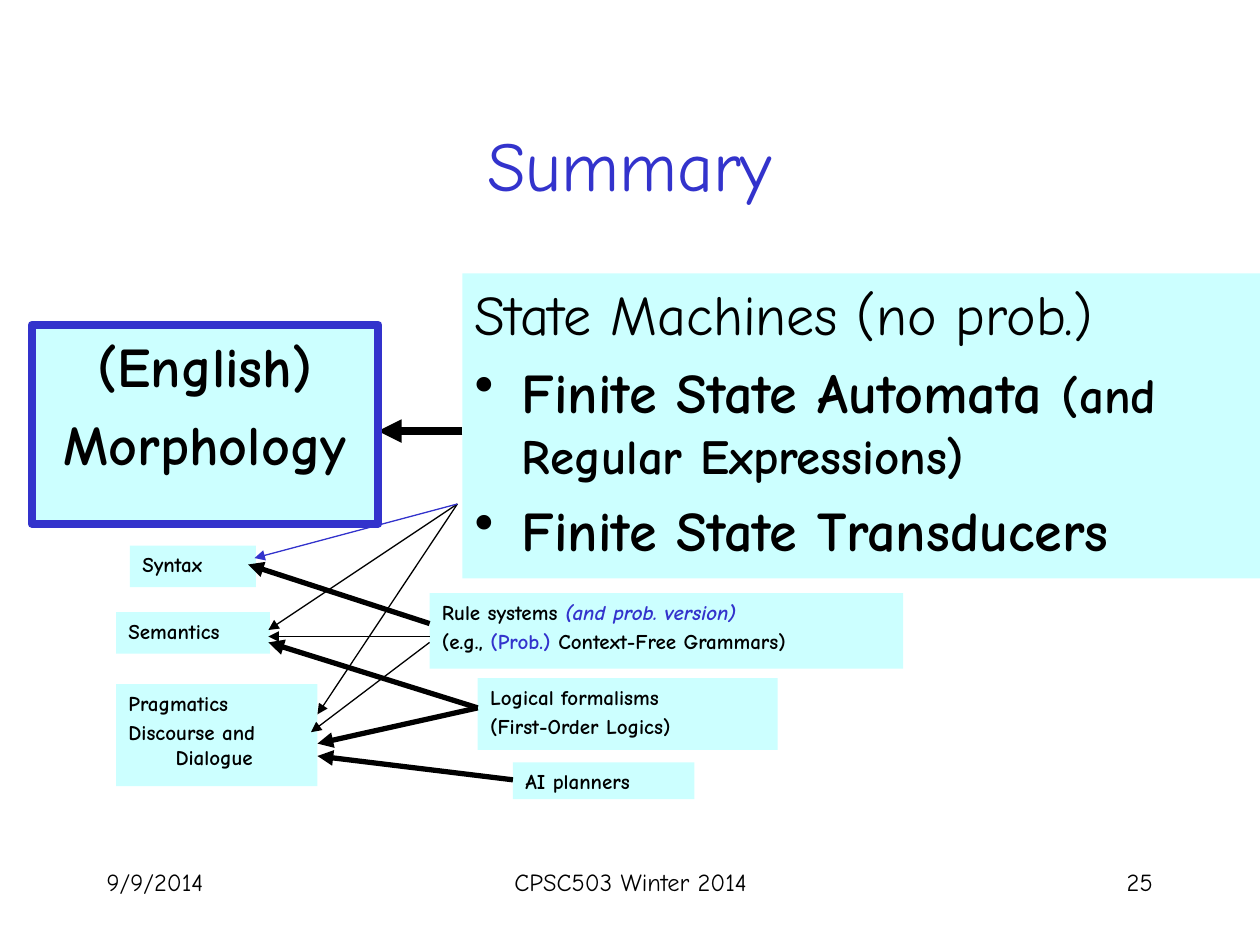
from dataclasses import dataclass
from typing import Optional

from lxml.etree import SubElement
from pptx import Presentation
from pptx.dml.color import RGBColor
from pptx.enum.shapes import MSO_CONNECTOR, MSO_SHAPE
from pptx.enum.text import MSO_ANCHOR, PP_ALIGN
from pptx.oxml.ns import qn
from pptx.util import Cm, Pt

FONT = "Comic Neue"
BLACK, BLUE, CYAN = "000000", "3333CC", "CCFFFF"
HANGING = 0.95


@dataclass
class Span:
    text: str
    size: float = 12
    bold: bool = True
    italic: bool = False
    color: str = BLACK


@dataclass
class Line:
    spans: list[Span]
    bullet: bool = False


@dataclass
class Topic:
    at: tuple[float, float, float, float]
    lines: list[Line]
    align: PP_ALIGN = PP_ALIGN.LEFT
    border: Optional[str] = None


@dataclass
class Arrow:
    start: tuple[float, float]
    end: tuple[float, float]
    width: float = 0.75
    color: str = BLACK


def rgb(color: str) -> RGBColor:
    return RGBColor.from_string(color)


def add_span(paragraph, span: Span) -> None:
    run = paragraph.add_run()
    run.text = span.text
    font = run.font
    font.name, font.size = FONT, Pt(span.size)
    font.bold, font.italic = span.bold, span.italic
    font.color.rgb = rgb(span.color)


def add_label(slide, at, span: Span, align: PP_ALIGN, anchor=MSO_ANCHOR.TOP) -> None:
    frame = slide.shapes.add_textbox(*map(Cm, at)).text_frame
    frame.word_wrap = True
    frame.vertical_anchor = anchor
    frame.paragraphs[0].alignment = align
    add_span(frame.paragraphs[0], span)


def add_topic(slide, topic: Topic) -> None:
    box = slide.shapes.add_shape(MSO_SHAPE.RECTANGLE, *map(Cm, topic.at))
    box.shadow.inherit = False
    box.fill.solid()
    box.fill.fore_color.rgb = rgb(CYAN)
    if topic.border:
        box.line.color.rgb = rgb(topic.border)
        box.line.width = Pt(4.5)
    else:
        box.line.fill.background()

    frame = box.text_frame
    frame.word_wrap = True
    frame.vertical_anchor = MSO_ANCHOR.TOP
    for index, line in enumerate(topic.lines):
        paragraph = frame.add_paragraph() if index else frame.paragraphs[0]
        paragraph.alignment = topic.align
        paragraph.space_before = Pt(0.2 * line.spans[0].size)
        properties = paragraph._p.get_or_add_pPr()
        properties.set("marL", str(Cm(HANGING)))
        properties.set("indent", str(-Cm(HANGING)))
        if line.bullet:
            SubElement(properties, qn("a:buChar"), char="•")
        for span in line.spans:
            add_span(paragraph, span)


def add_arrow(slide, arrow: Arrow) -> None:
    ends = map(Cm, arrow.start + arrow.end)
    connector = slide.shapes.add_connector(MSO_CONNECTOR.STRAIGHT, *ends)
    connector.line.color.rgb = rgb(arrow.color)
    connector.line.width = Pt(arrow.width)
    SubElement(connector.line._get_or_add_ln(), qn("a:tailEnd"), type="triangle")
    SubElement(connector._element.spPr, qn("a:effectLst"))


def small(*texts: str) -> list[Line]:
    return [Line([Span(text)]) for text in texts]


STATE_MACHINES = Topic((9.32, 5.51, 16.08, 6.15), [
    Line([Span("State Machines (no prob.)", 32, bold=False)]),
    Line([Span("Finite State Automata ", 32),
          Span("(and Regular Expressions)", 28)], bullet=True),
    Line([Span("Finite State Transducers", 32)], bullet=True),
])
MORPHOLOGY = Topic(
    (0.64, 6.55, 6.99, 4.01),
    [Line([Span("(English)", 32)]), Line([Span("Morphology", 32)])],
    PP_ALIGN.CENTER, BLUE)

RULE_SYSTEMS = [
    Line([Span("Rule systems "),
          Span("(and prob. version)", italic=True, color=BLUE)]),
    Line([Span("(e.g., "), Span("(Prob.)", color=BLUE),
          Span(" Context-Free Grammars)")]),
]
SMALL_TOPICS = [
    Topic((9.63, 13.67, 6.05, 1.45),
          small("Logical formalisms", "(First-Order Logics)")),
    Topic((8.66, 11.96, 9.55, 1.52), RULE_SYSTEMS),
    Topic((2.62, 11, 2.54, 0.84), small("Syntax")),
    Topic((2.34, 13.79, 4.06, 2.06),
          small("Pragmatics", "Discourse and Dialogue")),
    Topic((2.34, 12.34, 3.1, 0.84), small("Semantics")),
    Topic((10.34, 15.37, 3.66, 0.74), small("AI planners")),
]

# Arrow starting points on the formalisms
MACHINES_CORNER = (9.22, 10.16)
LOGIC_EDGE = (9.63, 14.27)
ARROWS = [
    Arrow((8.66, 12.57), (5, 11.38), 3),
    Arrow(LOGIC_EDGE, (5.41, 12.95), 3),
    Arrow(LOGIC_EDGE, (6.4, 14.99), 3),
    Arrow(MACHINES_CORNER, (5.41, 12.7)),
    Arrow(MACHINES_CORNER, (6.4, 14.4)),
    Arrow((8.66, 12.83), (5.41, 12.83)),
    Arrow((8.66, 12.95), (6.27, 14.76)),
    Arrow((10.34, 15.72), (6.4, 15.24), 3),
    Arrow(MACHINES_CORNER, (5.13, 11.25), color=BLUE),
]

FOOTER = [
    (1.9, 5.28, "9/9/2014", PP_ALIGN.LEFT),
    (8.69, 8.05, "CPSC503 Winter 2014", PP_ALIGN.CENTER),
    (18.21, 5.28, "25", PP_ALIGN.RIGHT),
]


def main() -> None:
    deck = Presentation()
    deck.slide_width, deck.slide_height = Cm(25.4), Cm(19.05)
    slide = deck.slides.add_slide(deck.slide_layouts[6])

    # Footer and title
    for left, width, text, align in FOOTER:
        add_label(slide, (left, 17.35, width, 1.27),
                  Span(text, 14, bold=False), align)
    add_label(slide, (1.9, 1.7, 21.59, 3.18),
              Span("Summary", 40, bold=False, color=BLUE),
              PP_ALIGN.CENTER, MSO_ANCHOR.MIDDLE)

    # Today's topic
    add_topic(slide, STATE_MACHINES)
    add_arrow(slide, Arrow((9.32, 8.69), (7.62, 8.69), 4.5))
    add_topic(slide, MORPHOLOGY)

    # Map of the remaining topics
    for topic in SMALL_TOPICS:
        add_topic(slide, topic)
    for arrow in ARROWS:
        add_arrow(slide, arrow)

    deck.save("out.pptx")


if __name__ == "__main__":
    main()
